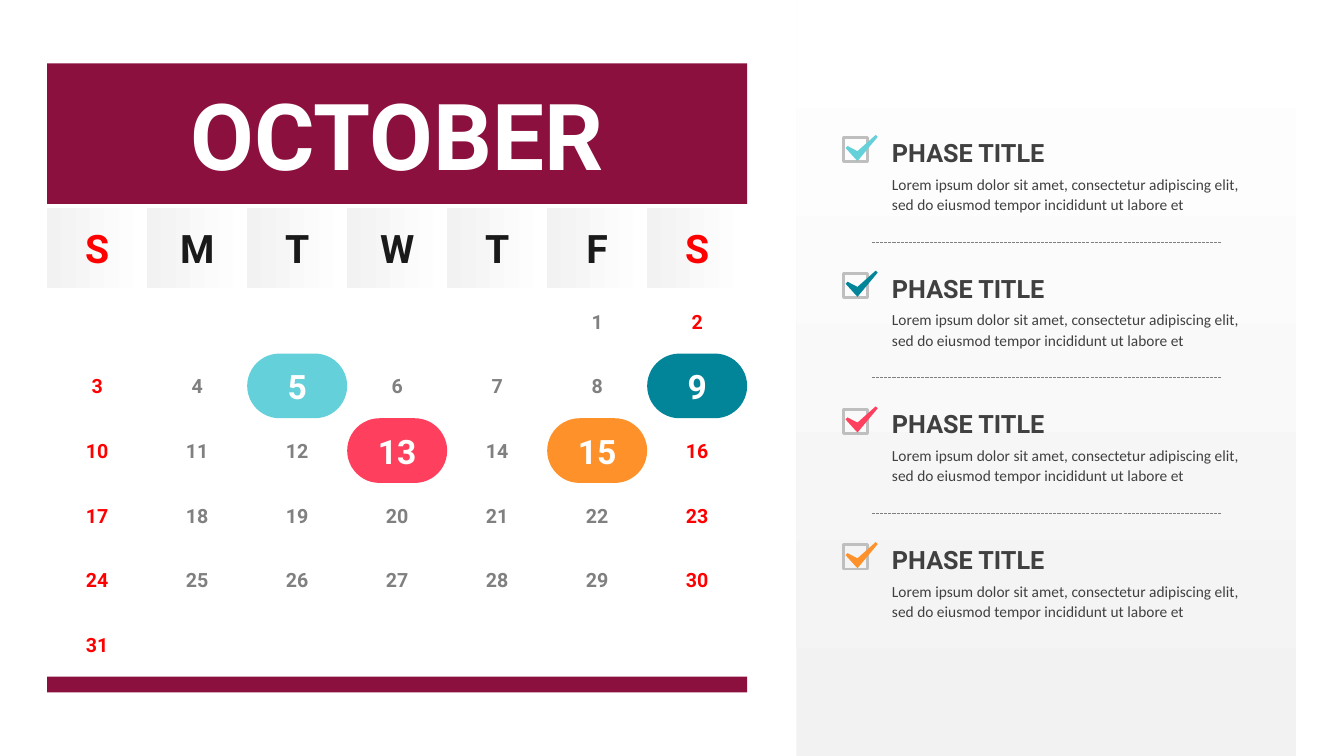
from dataclasses import dataclass
from typing import Any, Optional

from lxml.etree import SubElement
from pptx import Presentation
from pptx.dml.color import RGBColor
from pptx.enum.dml import MSO_LINE
from pptx.enum.shapes import MSO_CONNECTOR, MSO_SHAPE
from pptx.enum.text import MSO_ANCHOR, MSO_AUTO_SIZE, PP_ALIGN
from pptx.oxml.ns import qn
from pptx.shapes.autoshape import Shape
from pptx.util import Cm, Pt

HUES = {
    "wine": "8B103E", "red": "FF0000", "ink": "1A1A1A", "gray": "808080",
    "text": "404040", "frame": "BFBFBF", "pale": "F2F2F2", "white": "FFFFFF",
    "aqua": "64D0DA", "teal": "028599", "pink": "FF3F5E", "amber": "FE912A",
}
FRAME = {"word_wrap": True, "margin_left": 0, "margin_right": 0,
         "margin_top": 0, "margin_bottom": 0}
MIDDLE = FRAME | {"vertical_anchor": MSO_ANCHOR.MIDDLE}
GROW = FRAME | {"auto_size": MSO_AUTO_SIZE.SHAPE_TO_FIT_TEXT}
SPACED = {"line_spacing": 1.1, "space_before": Pt(4)}

LEFT, COL, ROW = 1.19, 2.52, 1.63
WIDTH = 7 * COL
DATES = 7.28
FIRST = 5  # column of the month's first day, Sunday being 0
STEP = 3.42
TICK = [(76, 0), (81, 5), (30, 66), (0, 33), (5, 28), (30, 41)]
LOREM = ("Lorem ipsum dolor sit amet, consectetur adipiscing elit, "
         "sed do eiusmod tempor incididunt ut labore et")


@dataclass(frozen=True)
class Box:
    x: float
    y: float
    w: float
    h: float

    def emu(self) -> tuple[Cm, Cm, Cm, Cm]:
        return Cm(self.x), Cm(self.y), Cm(self.w), Cm(self.h)


@dataclass(frozen=True)
class Phase:
    day: int
    hue: str
    title: str = "PHASE TITLE"
    body: str = LOREM


PHASES = [Phase(5, "aqua"), Phase(9, "teal"), Phase(13, "pink"), Phase(15, "amber")]


def color(hue: str) -> RGBColor:
    return RGBColor.from_string(HUES[hue])


def apply(item: Any, values: dict[str, Any]) -> None:
    for name, value in values.items():
        setattr(item, name, value)


def write(para: Any, text: str, size: float, hue: str,
          face: str = "Roboto", bold: bool = True) -> None:
    run = para.add_run()
    run.text = text
    apply(run.font, {"name": face, "size": Pt(size), "bold": bold})
    run.font.color.rgb = color(hue)


def center(shape: Shape, text: str, size: float, hue: str) -> None:
    frame = shape.text_frame
    apply(frame, MIDDLE)
    frame.paragraphs[0].alignment = PP_ALIGN.CENTER
    write(frame.paragraphs[0], text, size, hue)


def paint(shape: Shape, hue: str) -> None:
    shape.shadow.inherit = False
    shape.fill.solid()
    shape.fill.fore_color.rgb = color(hue)
    shape.line.fill.background()


def block(shapes: Any, box: Box, hue: str, kind: MSO_SHAPE = MSO_SHAPE.RECTANGLE) -> Shape:
    shape = shapes.add_shape(kind, *box.emu())
    paint(shape, hue)
    return shape


def fade(shapes: Any, box: Box, angle: float) -> Shape:
    """Draw a rectangle that runs from pale gray to white."""
    shape = block(shapes, box, "white")
    shape.fill.gradient()
    shape.fill.gradient_angle = angle
    for stop, hue in zip(shape.fill.gradient_stops, ("pale", "white")):
        stop.color.rgb = color(hue)
    for stop, place in zip(shape.fill.gradient_stops, (0, 1)):
        stop.position = place
    return shape


def month(shapes: Any) -> None:
    """Draw the calendar with its marked days."""
    for col, name in enumerate("SMTWTFS"):
        head = fade(shapes, Box(LEFT + col * COL, 5.23, COL, 2.04), 0)
        center(head, name, 28, "red" if col in (0, 6) else "ink")
    title = block(shapes, Box(LEFT, 1.6, WIDTH, 3.54), "wine")
    center(title, "OCTOBER", 66, "white")

    marks = {phase.day: phase.hue for phase in PHASES}
    for day in range(1, 32):
        row, col = divmod(day - 1 + FIRST, 7)
        box = Box(LEFT + col * COL, DATES + row * ROW, COL, ROW)
        mark: Optional[str] = marks.get(day)
        if mark:
            pill = block(shapes, box, mark, MSO_SHAPE.ROUNDED_RECTANGLE)
            pill.adjustments[0] = 0.5
            center(pill, str(day), 24, "white")
        else:
            cell = shapes.add_textbox(*box.emu())
            center(cell, str(day), 14, "red" if col in (0, 6) else "gray")
    block(shapes, Box(LEFT, 17.05, WIDTH, 0.4), "wine")


def check(shapes: Any, top: float, hue: str) -> None:
    square = block(shapes, Box(21.26, top + 0.09, 0.61, 0.61), "white")
    square.fill.background()
    square.line.color.rgb = color("frame")
    square.line.width = Pt(2)
    pen = shapes.build_freeform(*TICK[0], scale=Cm(0.01))
    pen.add_line_segments(TICK[1:], close=True)
    paint(pen.convert_to_shape(Cm(21.31), Cm(top + 0.02)), hue)


def entry(shapes: Any, top: float, phase: Phase) -> None:
    """Draw one phase: its check mark, title and text."""
    check(shapes.add_group_shape().shapes, top, phase.hue)
    frame = shapes.add_textbox(*Box(22.48, top, 8.99, 2.03).emu()).text_frame
    apply(frame, GROW)
    head, body = frame.paragraphs[0], frame.add_paragraph()
    for para in (head, body):
        apply(para, SPACED)
    write(head, phase.title, 18, "text")
    write(body, phase.body, 11, "text", "Calibri", False)


def rule(shapes: Any, y: float) -> None:
    line = shapes.add_connector(MSO_CONNECTOR.STRAIGHT, Cm(21.97), Cm(y), Cm(30.76), Cm(y))
    line.line.color.rgb = color("gray")
    apply(line.line, {"width": Pt(0.75), "dash_style": MSO_LINE.SQUARE_DOT})
    SubElement(line._element.spPr, qn("a:effectLst"))


def main() -> None:
    deck = Presentation()
    apply(deck, {"slide_width": Cm(33.87), "slide_height": Cm(19.05)})
    shapes = deck.slides.add_slide(deck.slide_layouts[6]).shapes
    month(shapes.add_group_shape().shapes)
    fade(shapes, Box(20.07, 0, 12.6, 19.05), 90)
    for i, phase in enumerate(PHASES):
        entry(shapes, 3.38 + i * STEP, phase)
    for i in range(len(PHASES) - 1):
        rule(shapes, 6.1 + i * STEP)
    deck.save("out.pptx")


if __name__ == "__main__":
    main()
